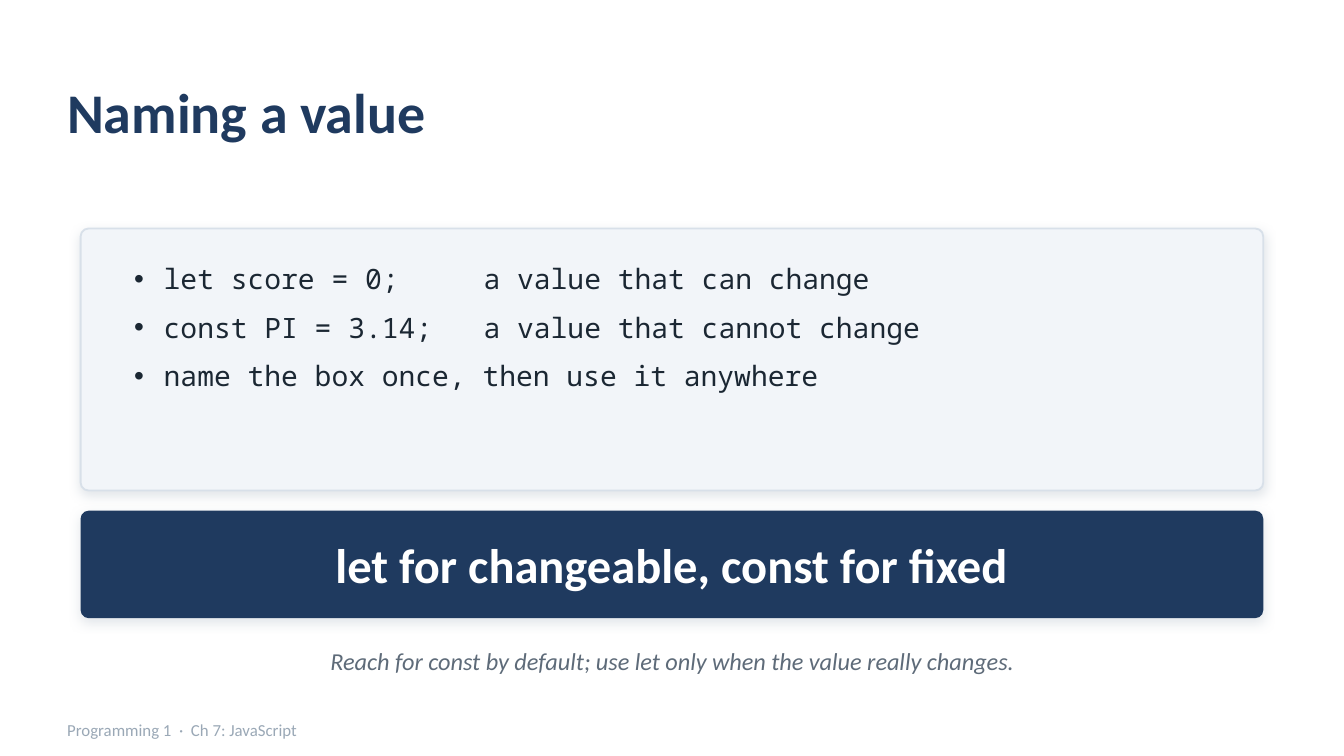
from dataclasses import dataclass, field

from lxml import etree
from pptx import Presentation
from pptx.dml.color import RGBColor
from pptx.enum.shapes import MSO_SHAPE
from pptx.enum.text import MSO_ANCHOR, PP_ALIGN
from pptx.oxml.ns import qn
from pptx.util import Inches, Pt

ROUNDED = MSO_SHAPE.ROUNDED_RECTANGLE
TOP, MIDDLE = MSO_ANCHOR.TOP, MSO_ANCHOR.MIDDLE
LEFT, CENTER = PP_ALIGN.LEFT, PP_ALIGN.CENTER
COLORS = {
    "navy": "1F3A5F",
    "ink": "1B2733",
    "slate": "5E6B79",
    "mist": "9AA8B6",
    "panel": "F2F5F9",
    "border": "D8E0E9",
    "white": "FFFFFF",
}
SLIDE_WIDTH = Inches(10)
SLIDE_HEIGHT = SLIDE_WIDTH * 9 // 16
BULLET_INDENT = Inches(0.22)
EXPLANATION_TAB = Inches(2.6)
CORNER_RADIUS = 0.06


@dataclass
class Box:
    left: float
    top: float
    width: float
    height: float

    def lengths(self):
        return [Inches(n) for n in (self.left, self.top, self.width, self.height)]


@dataclass
class Card:
    box: Box
    fill: str
    border: str | None = None


@dataclass
class Label:
    box: Box
    lines: list[str]
    color: str
    font: dict
    align: PP_ALIGN = LEFT
    anchor: MSO_ANCHOR = MIDDLE
    bulleted: bool = False
    frame: dict = field(default_factory=lambda: dict.fromkeys(
        ("margin_left", "margin_top", "margin_right", "margin_bottom"), 0))


CARDS = [
    Card(Box(0.6, 1.7, 8.8, 1.95), "panel", "border"),
    Card(Box(0.6, 3.8, 8.8, 0.8), "navy"),
]
LABELS = [
    Label(Box(0.5, 0.4, 9, 0.85), ["Naming a value"], "navy",
          {"name": "Calibri", "size": Pt(30), "bold": True}),
    Label(Box(0.9, 1.9, 8.2, 1.6),
          ["let score = 0;\ta value that can change",
           "const PI = 3.14;\ta value that cannot change",
           "name the box once, then use it anywhere"], "ink",
          {"name": "Noto Sans Mono", "size": Pt(15)},
          anchor=TOP, bulleted=True, frame={}),
    Label(Box(0.6, 3.83, 8.8, 0.74), ["let for changeable, const for fixed"], "white",
          {"name": "Calibri", "size": Pt(26), "bold": True}, CENTER),
    Label(Box(0.6, 4.72, 8.8, 0.4),
          ["Reach for const by default; use let only when the value really changes."],
          "slate", {"name": "Calibri", "size": Pt(13), "italic": True}, CENTER),
    Label(Box(0.5, 5.3, 8, 0.26), ["Programming 1  ·  Ch 7: JavaScript"], "mist",
          {"name": "Calibri", "size": Pt(9)}),
]


def rgb(name: str) -> RGBColor:
    return RGBColor.from_string(COLORS[name])


def set_attributes(target, values: dict) -> None:
    for name, value in values.items():
        setattr(target, name, value)


def add_element(parent, tag: str, **attributes):
    return etree.SubElement(parent, qn(tag), {k: str(v) for k, v in attributes.items()})


def add_soft_shadow(shape) -> None:
    """Cast a faint shadow straight down."""
    shape.shadow.inherit = False
    effects = shape._element.spPr.find(qn("a:effectLst"))
    shadow = add_element(effects, "a:outerShdw", blurRad=Pt(6), dist=Pt(2),
                         dir=90 * 60000, algn="bl", rotWithShape=0)
    color = add_element(shadow, "a:srgbClr", val=COLORS["mist"])
    add_element(color, "a:alpha", val=28000)


def add_card(slide, card: Card) -> None:
    shape = slide.shapes.add_shape(ROUNDED, *card.box.lengths())
    shape.adjustments[0] = CORNER_RADIUS / min(card.box.width, card.box.height)
    shape.fill.solid()
    shape.fill.fore_color.rgb = rgb(card.fill)
    if card.border:
        shape.line.color.rgb = rgb(card.border)
        shape.line.width = Pt(1)
    else:
        shape.line.fill.background()
    add_soft_shadow(shape)


def add_bullet(paragraph) -> None:
    """Give a hanging bullet and a tab stop for the explanation column."""
    properties = paragraph._p.get_or_add_pPr()
    properties.set("marL", str(BULLET_INDENT))
    properties.set("indent", str(-BULLET_INDENT))
    add_element(properties, "a:buFont", typeface="Arial")
    add_element(properties, "a:buChar", char="•")
    tabs = add_element(properties, "a:tabLst")
    add_element(tabs, "a:tab", pos=EXPLANATION_TAB, algn="l")
    paragraph.space_after = Pt(8)


def add_label(slide, label: Label) -> None:
    text_frame = slide.shapes.add_textbox(*label.box.lengths()).text_frame
    set_attributes(text_frame, {"word_wrap": True, "vertical_anchor": label.anchor,
                                **label.frame})
    for index, line in enumerate(label.lines):
        paragraph = text_frame.add_paragraph() if index else text_frame.paragraphs[0]
        paragraph.alignment = label.align
        if label.bulleted:
            add_bullet(paragraph)
        run = paragraph.add_run()
        run.text = line
        set_attributes(run.font, label.font)
        run.font.color.rgb = rgb(label.color)


def main() -> None:
    presentation = Presentation()
    presentation.slide_width = SLIDE_WIDTH
    presentation.slide_height = SLIDE_HEIGHT
    slide = presentation.slides.add_slide(presentation.slide_layouts[6])
    # The banner and its text lie above the panel and its bullets.
    title, bullets, *lower_labels = LABELS
    panel, banner = CARDS
    add_label(slide, title)
    add_card(slide, panel)
    add_label(slide, bullets)
    add_card(slide, banner)
    for label in lower_labels:
        add_label(slide, label)
    presentation.save("out.pptx")


if __name__ == "__main__":
    main()
